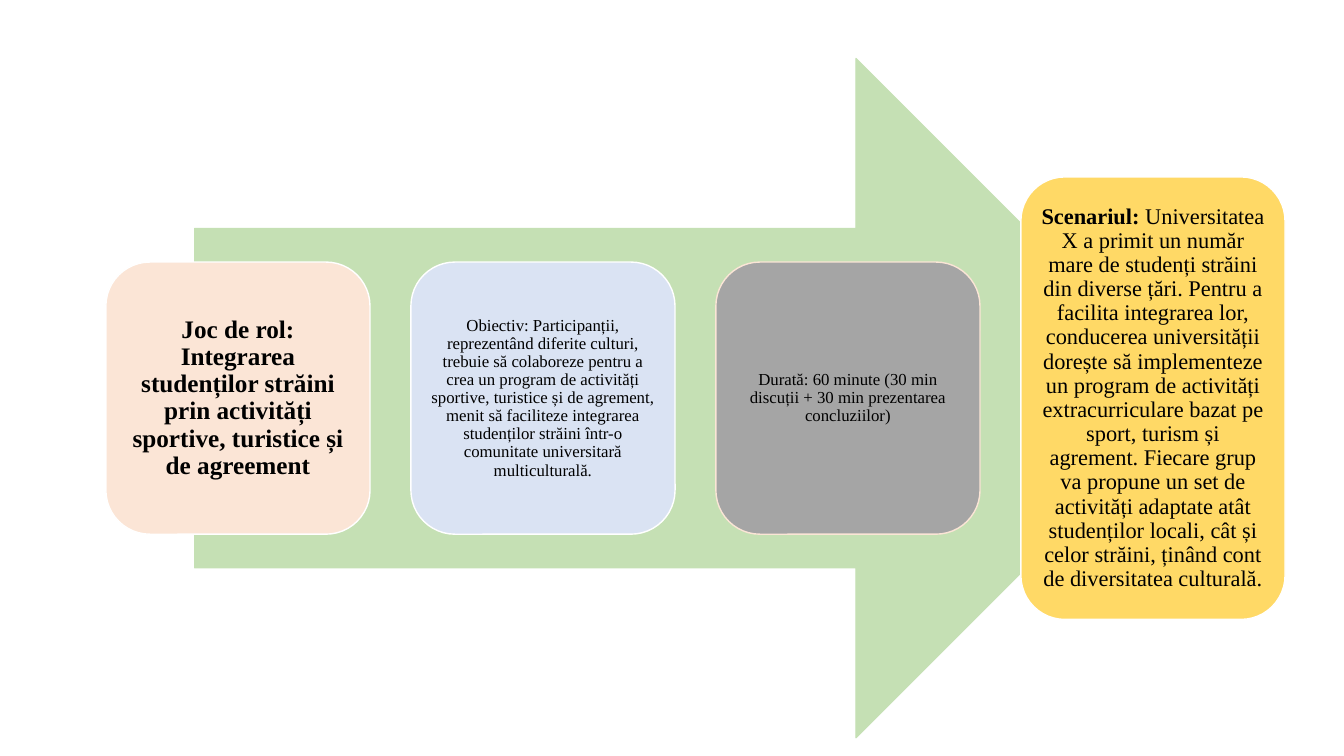
from pptx import Presentation
from pptx.dml.color import RGBColor
from pptx.enum.shapes import MSO_SHAPE as Shape
from pptx.enum.text import MSO_ANCHOR as Anchor, PP_ALIGN as Align
from pptx.util import Inches, Pt

# Content: runs are (text, bold)
COLORS = {"arrow": "C5E0B4", "peach": "FBE5D6", "blue": "DAE3F3", "gray": "A5A5A5",
          "gold": "FFD966", "white": "FFFFFF", "text": "000000"}
CARDS = [
    {"fill": "peach", "line": "white", "height": 2.7, "size": 18, "inset": 0.07, "runs": [
        ("Joc de rol: Integrarea studenților străini prin activități sportive, "
         "turistice și de agreement", True)]},
    {"fill": "blue", "line": "white", "height": 2.7, "size": 12, "inset": 0.05, "runs": [
        ("Obiectiv: Participanții, reprezentând diferite culturi, trebuie să colaboreze "
         "pentru a crea un program de activități sportive, turistice și de agrement, menit "
         "să faciliteze integrarea studenților străini într-o comunitate universitară "
         "multiculturală.", False)]},
    {"fill": "gray", "line": "peach", "height": 2.7, "size": 12, "inset": 0.05, "runs": [
        ("Durată: 60 minute (30 min discuții + 30 min prezentarea concluziilor)", False)]},
    {"fill": "gold", "line": "white", "height": 4.39, "size": 16, "inset": 0.07, "runs": [
        ("Scenariul: ", True),
        ("Universitatea X a primit un număr mare de studenți străini din diverse țări. "
         "Pentru a facilita integrarea lor, conducerea universității dorește să implementeze "
         "un program de activități extracurriculare bazat pe sport, turism și agrement. "
         "Fiecare grup va propune un set de activități adaptate atât studenților locali, "
         "cât și celor străini, ținând cont de diversitatea culturală.", False)]},
]

# Layout in inches: cards in equal columns, all centred on the arrow's axis
SLIDE_WIDTH, SLIDE_HEIGHT = 13.33, 7.5
AXIS = 3.95
ARROW_LEFT, ARROW_WIDTH, ARROW_HEIGHT = 1.93, 9.93, 6.74
CARD_LEFT, CARD_WIDTH, CARD_GAP = 1.05, 2.62, 0.405

deck = Presentation()
deck.slide_width, deck.slide_height = Inches(SLIDE_WIDTH), Inches(SLIDE_HEIGHT)
page = deck.slides.add_slide(deck.slide_layouts[6])


def color(name):
    return RGBColor.from_string(COLORS[name])


def add_on_axis(kind, left, width, height, fill, line, line_width):
    shape = page.shapes.add_shape(kind, Inches(left), Inches(AXIS - height / 2),
                                  Inches(width), Inches(height))
    shape.shadow.inherit = False
    shape.fill.solid()
    shape.fill.fore_color.rgb = color(fill)
    shape.line.color.rgb = color(line)
    shape.line.width = Pt(line_width)
    return shape


def write(box, runs, size, inset):
    frame = box.text_frame
    margins = {f"margin_{side}": Inches(inset) for side in ("left", "top", "right", "bottom")}
    for name, value in {**margins, "word_wrap": True, "vertical_anchor": Anchor.MIDDLE}.items():
        setattr(frame, name, value)
    para = frame.paragraphs[0]
    para.alignment, para.line_spacing = Align.CENTER, 0.9
    for text, bold in runs:
        span = para.add_run()
        span.text = text
        for name, value in {"name": "Times New Roman", "size": Pt(size), "bold": bold}.items():
            setattr(span.font, name, value)
        span.font.color.rgb = color("text")


# Background arrow
add_on_axis(Shape.RIGHT_ARROW, ARROW_LEFT, ARROW_WIDTH, ARROW_HEIGHT, "arrow", "arrow", 0.75)

# Cards along the arrow
for column, card in enumerate(CARDS):
    left = CARD_LEFT + column * (CARD_WIDTH + CARD_GAP)
    box = add_on_axis(Shape.ROUNDED_RECTANGLE, left, CARD_WIDTH, card["height"],
                      card["fill"], card["line"], 1)
    write(box, card["runs"], card["size"], card["inset"])

deck.save("out.pptx")
